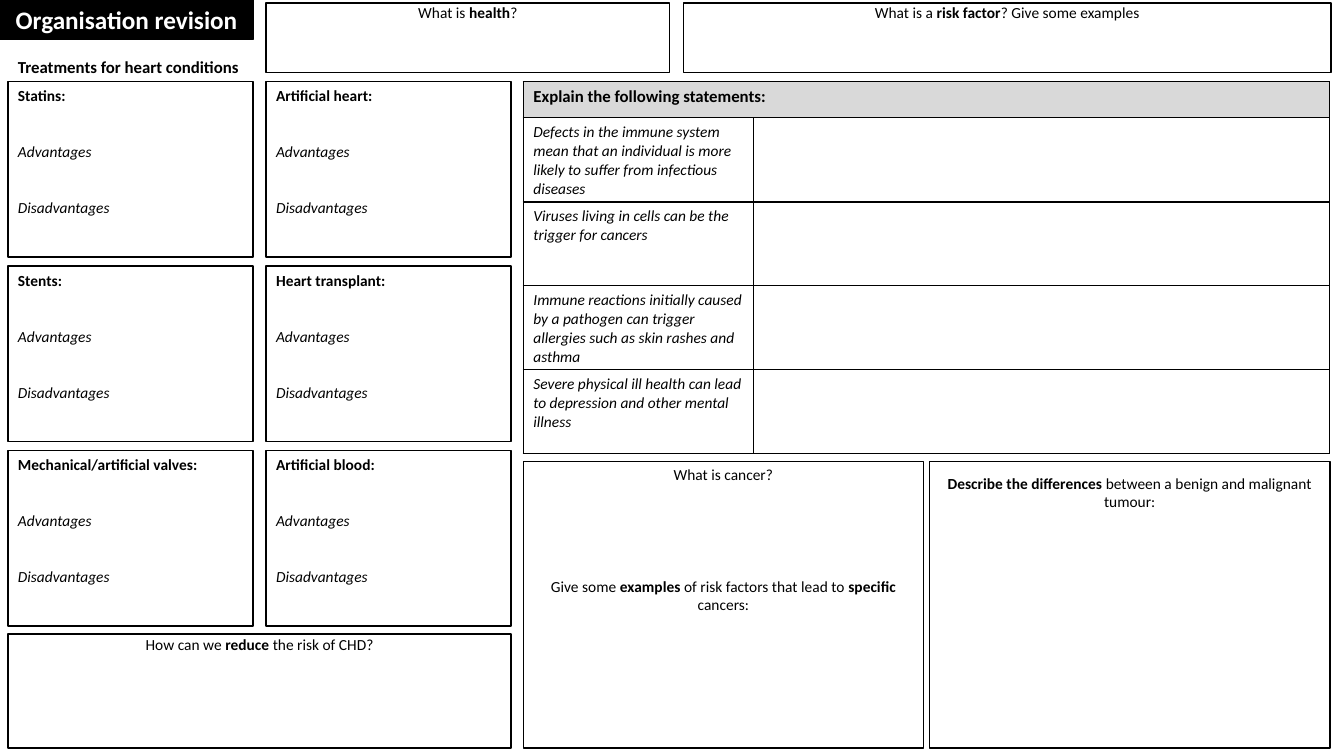
from collections import namedtuple

from lxml.etree import SubElement
from pptx import Presentation
from pptx.dml.color import RGBColor
from pptx.enum.shapes import MSO_SHAPE
from pptx.enum.text import MSO_ANCHOR, MSO_AUTO_SIZE, PP_ALIGN
from pptx.oxml.ns import qn
from pptx.util import Inches, Pt

BLACK = RGBColor(0x00, 0x00, 0x00)
WHITE = RGBColor(0xFF, 0xFF, 0xFF)
HEADER_GREY = RGBColor(0xD9, 0xD9, 0xD9)
FONT = "Calibri"
BODY_SIZE = 11
HEADING_SIZE = 12

Box = namedtuple("Box", "left top width height")

SLIDE_WIDTH, SLIDE_HEIGHT = 13.33, 7.5
LEFT_EDGE, TOP_EDGE = 0.08, 0.81
CARD_WIDTH, CARD_HEIGHT = 2.43, 1.74
COLUMN_STEP, ROW_STEP = 2.56, 1.83
SECOND_COLUMN = LEFT_EDGE + COLUMN_STEP
RIGHT_EDGE = 5.19
STATEMENT_WIDTH, ANSWER_WIDTH = 2.28, 5.72
HEADER_HEIGHT, STATEMENT_HEIGHT = 0.36, 0.83
CANCER_TOP, CANCER_WIDTH, CANCER_HEIGHT, CANCER_STEP = 4.58, 3.97, 2.84, 4.03

TREATMENT_COLUMNS = [
    ["Statins:", "Stents:", "Mechanical/artificial valves:"],
    ["Artificial heart:", "Heart transplant:", "Artificial blood:"],
]
STATEMENTS = [
    "Defects in the immune system mean that an individual is more likely to "
    "suffer from infectious diseases",
    "Viruses living in cells can be the trigger for cancers",
    "Immune reactions initially caused by a pathogen can trigger allergies "
    "such as skin rashes and asthma",
    "Severe physical ill health can lead to depression and other mental illness",
]


def inches(box):
    return [Inches(length) for length in box]


def style_run(run, size=BODY_SIZE, color=BLACK, bold=False, italic=False):
    run.font.name = FONT
    run.font.size = Pt(size)
    run.font.color.rgb = color
    run.font.bold = bold
    run.font.italic = italic


def write_marked(paragraph, marked_text):
    """Write centred text in which *starred* words are bold."""
    paragraph.alignment = PP_ALIGN.CENTER
    for index, part in enumerate(marked_text.split("*")):
        if part:
            run = paragraph.add_run()
            run.text = part
            style_run(run, bold=index % 2 == 1)


def add_panel(slide, box, top_inset):
    """Add a white outlined rectangle and return its text frame."""
    panel = slide.shapes.add_shape(MSO_SHAPE.RECTANGLE, *inches(box))
    panel.shadow.inherit = False
    panel.fill.solid()
    panel.fill.fore_color.rgb = WHITE
    panel.line.color.rgb = BLACK
    panel.line.width = Pt(1)
    frame = panel.text_frame
    frame.word_wrap = True
    frame.vertical_anchor = MSO_ANCHOR.TOP
    frame.margin_top = Inches(top_inset)
    frame.margin_bottom = 0
    return frame


def add_question(slide, box, prompts, top_inset=0.0, gap=0):
    frame = add_panel(slide, box, top_inset)
    for index, prompt in enumerate(prompts):
        paragraph = frame.add_paragraph() if index else frame.paragraphs[0]
        if index:
            paragraph.space_before = Pt(gap)
        write_marked(paragraph, prompt)


def add_treatment(slide, box, treatment):
    frame = add_panel(slide, box, 0.05)
    frame.text = "\n".join([treatment, "Advantages", "Disadvantages"])
    for index, paragraph in enumerate(frame.paragraphs):
        paragraph.alignment = PP_ALIGN.LEFT
        paragraph.space_before = Pt(26.7 if index else 0)
        style_run(paragraph.runs[0], bold=index == 0, italic=index > 0)


def add_title(slide, box):
    title = slide.shapes.title
    title.left, title.top, title.width, title.height = inches(box)
    title.fill.solid()
    title.fill.fore_color.rgb = BLACK
    title.line.color.rgb = BLACK
    title.line.width = Pt(1)
    frame = title.text_frame
    frame.text = "Organisation revision"
    frame.auto_size = MSO_AUTO_SIZE.NONE
    frame.vertical_anchor = MSO_ANCHOR.MIDDLE
    frame.paragraphs[0].alignment = PP_ALIGN.CENTER
    style_run(frame.paragraphs[0].runs[0], 18, WHITE, bold=True)


def add_treatments(slide, box):
    """Place the heading just above the box and the cards in its grid."""
    heading = slide.shapes.add_textbox(
        *inches(Box(box.left, box.top - 0.3, CARD_WIDTH, 0.3)))
    frame = heading.text_frame
    frame.word_wrap = True
    frame.text = "Treatments for heart conditions"
    style_run(frame.paragraphs[0].runs[0], HEADING_SIZE, bold=True)
    for column, treatments in enumerate(TREATMENT_COLUMNS):
        for row, treatment in enumerate(treatments):
            card = Box(box.left + column * COLUMN_STEP,
                       box.top + row * ROW_STEP, CARD_WIDTH, CARD_HEIGHT)
            add_treatment(slide, card, treatment)


def outline_cell(cell):
    properties = cell._tc.get_or_add_tcPr()
    for index, side in enumerate(("a:lnL", "a:lnR", "a:lnT", "a:lnB")):
        border = SubElement(properties, qn(side), w=str(Pt(1)))
        fill = SubElement(border, qn("a:solidFill"))
        SubElement(fill, qn("a:srgbClr"), val=str(BLACK))
        properties.insert(index, border)


def add_statements(slide, box):
    table = slide.shapes.add_table(len(STATEMENTS) + 1, 2, *inches(box)).table
    table.first_row = False
    table.horz_banding = False
    table.columns[0].width = Inches(STATEMENT_WIDTH)
    table.columns[1].width = Inches(ANSWER_WIDTH)
    for index, row in enumerate(table.rows):
        row.height = Inches(STATEMENT_HEIGHT if index else HEADER_HEIGHT)
        for cell in row.cells:
            cell.fill.solid()
            cell.fill.fore_color.rgb = WHITE if index else HEADER_GREY
            outline_cell(cell)
    header = table.cell(0, 0)
    header.merge(table.cell(0, 1))
    header.text_frame.text = "Explain the following statements:"
    style_run(header.text_frame.paragraphs[0].runs[0], HEADING_SIZE, bold=True)
    for row, statement in enumerate(STATEMENTS, start=1):
        frame = table.cell(row, 0).text_frame
        frame.text = statement
        style_run(frame.paragraphs[0].runs[0], italic=True)


def add_cancer_questions(slide, box):
    cancer = Box(box.left, box.top, CANCER_WIDTH, box.height)
    add_question(slide, cancer, [
        "What is cancer?",
        "Give some *examples* of risk factors that lead to *specific* cancers:",
    ], top_inset=0.03, gap=67)
    tumours = cancer._replace(left=box.left + CANCER_STEP)
    add_question(slide, tumours, [
        "*Describe the differences *between a benign and malignant tumour:",
    ], top_inset=0.12)


def main():
    presentation = Presentation()
    presentation.slide_width = Inches(SLIDE_WIDTH)
    presentation.slide_height = Inches(SLIDE_HEIGHT)
    slide = presentation.slides.add_slide(presentation.slide_layouts[5])

    add_title(slide, Box(0, 0, 2.51, 0.39))
    add_question(slide, Box(SECOND_COLUMN, 0.03, 4, 0.69), ["What is *health*?"])
    add_question(slide, Box(6.78, 0.03, 6.42, 0.69),
                 ["What is a *risk factor*? Give some examples"])
    treatments_width = COLUMN_STEP + CARD_WIDTH
    add_treatments(slide, Box(LEFT_EDGE, TOP_EDGE, treatments_width,
                              2 * ROW_STEP + CARD_HEIGHT))
    add_question(slide, Box(LEFT_EDGE, 6.29, treatments_width, 1.13),
                 ["How can we *reduce* the risk of CHD?"], top_inset=0.01)
    table_height = HEADER_HEIGHT + len(STATEMENTS) * STATEMENT_HEIGHT
    add_statements(slide, Box(RIGHT_EDGE, TOP_EDGE,
                              STATEMENT_WIDTH + ANSWER_WIDTH, table_height))
    add_cancer_questions(slide, Box(RIGHT_EDGE, CANCER_TOP,
                                    CANCER_STEP + CANCER_WIDTH, CANCER_HEIGHT))
    presentation.save("out.pptx")


if __name__ == "__main__":
    main()
